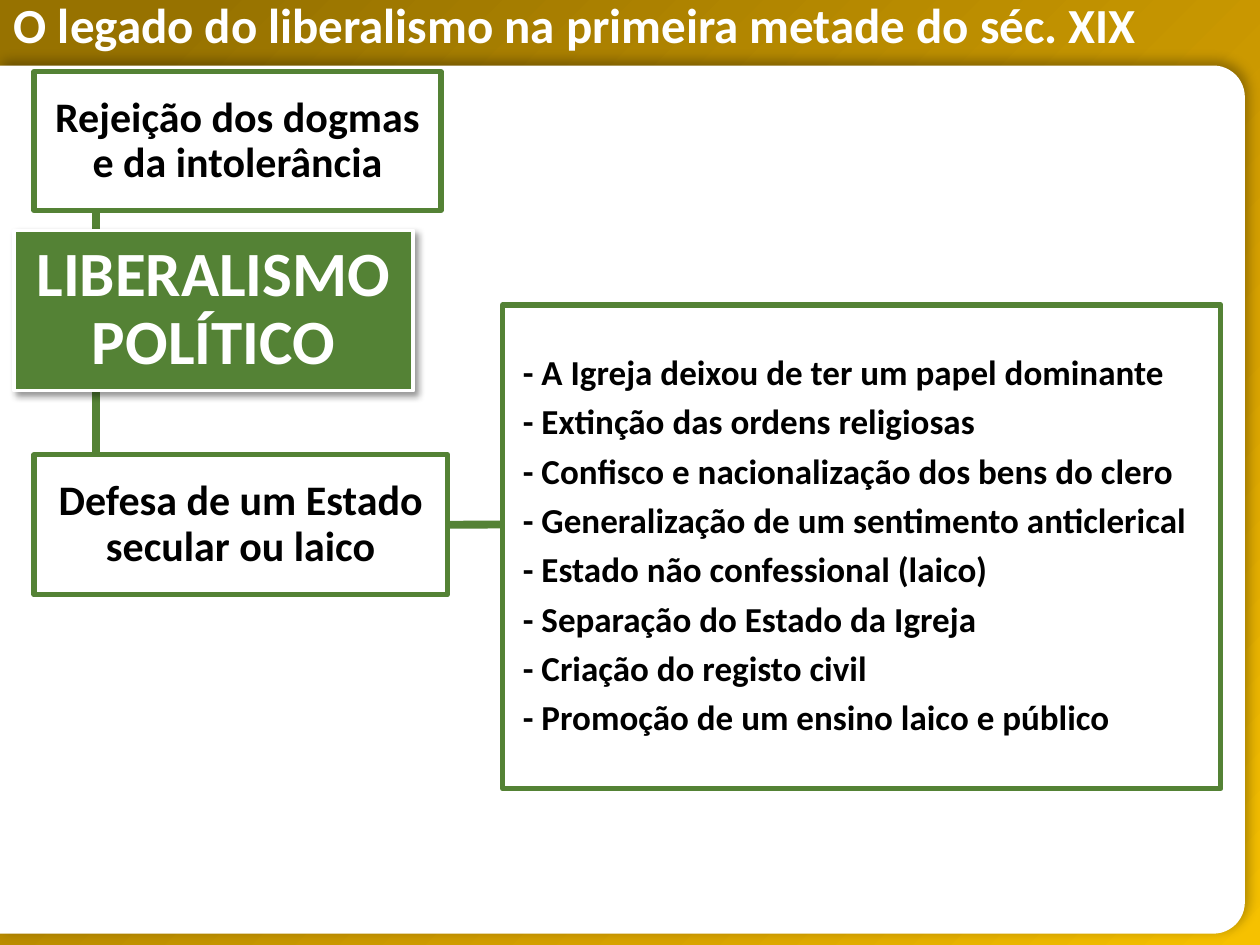
from copy import deepcopy
from math import cos, pi, sin

from lxml.etree import SubElement
from pptx import Presentation
from pptx.dml.color import RGBColor
from pptx.enum.shapes import MSO_CONNECTOR, MSO_SHAPE
from pptx.enum.text import MSO_ANCHOR, MSO_AUTO_SIZE, PP_ALIGN
from pptx.oxml.ns import qn
from pptx.util import Inches, Pt

GREEN, WHITE, BLACK = "548235", "FFFFFF", "000000"
GOLD_STOPS = [(9, "977200"), (72, "D7A200"), (100, "F6C100")]


def color(value):
    return RGBColor.from_string(value)


def write(shape, text, size, ink=BLACK, font="Calibri", align=PP_ALIGN.CENTER,
          anchor=MSO_ANCHOR.MIDDLE, insets=(0.01, 0.01, 0.01, 0.01), spacing=0.9, after=0):
    """Fill the shape with bold text; insets are left, top, right, bottom in inches."""
    frame = shape.text_frame
    frame.word_wrap = True
    frame.auto_size = MSO_AUTO_SIZE.NONE
    frame.vertical_anchor = anchor
    (frame.margin_left, frame.margin_top,
     frame.margin_right, frame.margin_bottom) = map(Inches, insets)
    frame.text = text
    for para in frame.paragraphs:
        para.alignment = align
        para.line_spacing = spacing
        para.space_before, para.space_after = Pt(0), Pt(after)
        for span in para.runs:
            span.font.name, span.font.size, span.font.bold = font, Pt(size), True
            span.font.color.rgb = color(ink)


def add_shadow(shape, alpha, blur, distance, angle):
    effects = shape.element.spPr.find(qn("a:effectLst"))
    shadow = SubElement(effects, qn("a:outerShdw"), blurRad=str(Pt(blur)),
                        dist=str(Pt(distance)), dir=str(angle * 60000),
                        algn="ctr", rotWithShape="0")
    tint = SubElement(shadow, qn("a:srgbClr"), val=BLACK)
    SubElement(tint, qn("a:alpha"), val=str(alpha * 1000))


class Diagram:
    def __init__(self, page, accent=GREEN):
        self.page = page
        self.accent = accent

    def style(self, shape, fill=None, line=None, line_width=3):
        shape.shadow.inherit = False
        if fill:
            shape.fill.solid()
            shape.fill.fore_color.rgb = color(fill)
        if line:
            shape.line.color.rgb = color(line)
            shape.line.width = Pt(line_width)
        else:
            shape.line.fill.background()
        return shape

    def rectangle(self, left, top, width, height, **look):
        box = self.page.shapes.add_shape(
            MSO_SHAPE.RECTANGLE, *map(Inches, (left, top, width, height)))
        return self.style(box, **look)

    def backdrop(self, width, height, stops):
        box = self.rectangle(0, 0, width, height)
        box.fill.gradient()
        box.fill.gradient_angle = 315
        stop_list = next(box.element.iter(qn("a:gsLst")))
        while len(stop_list) < len(stops):
            stop_list.append(deepcopy(stop_list[0]))
        for stop, (percent, value) in zip(box.fill.gradient_stops, stops):
            stop.position = percent / 100
            stop.color.rgb = color(value)

    def title(self, text):
        box = self.page.shapes.title
        box.element.getparent().append(box.element)  # in front of the backdrop
        box.left, box.top, box.width, box.height = map(Inches, (0.01, 0.15, 9.6, 0.37))
        write(box, text, 28, WHITE, align=PP_ALIGN.LEFT, anchor=MSO_ANCHOR.TOP,
              insets=(0.1, 0.05, 0.1, 0.05), spacing=Pt(16))

    def panel(self, top, right, bottom, radius, steps=12):
        """White sheet from the left edge, rounded at its right corners."""
        points = []
        for center_y, start in ((top + radius, -pi / 2), (bottom - radius, 0)):
            for step in range(steps + 1):
                angle = start + pi / 2 * step / steps
                points.append((Inches(right - radius + radius * cos(angle)),
                               Inches(center_y + radius * sin(angle))))
        points.append((0, Inches(bottom)))
        builder = self.page.shapes.build_freeform(0, Inches(top))
        builder.add_line_segments(points, close=True)
        add_shadow(self.style(builder.convert_to_shape(), WHITE), 30, 7, 3, 315)

    def connector(self, start, end):
        line = self.page.shapes.add_connector(
            MSO_CONNECTOR.STRAIGHT, *map(Inches, start + end))
        line.line.color.rgb = color(self.accent)
        line.line.width = Pt(4.5)
        SubElement(line.element.spPr, qn("a:effectLst"))
        return line

    def card(self, left, top, width, height, text, size=24, **text_format):
        box = self.rectangle(left, top, width, height, fill=WHITE, line=self.accent)
        write(box, text, size, **text_format)
        return box

    def heading(self, left, top, width, height, text):
        box = self.rectangle(left, top, width, height, fill=self.accent,
                             line=WHITE, line_width=2.25)
        add_shadow(box, 40, 4, 3, 45)
        write(box, text, 36, WHITE, insets=(0.08, 0.07, 0.08, 0.07))


def main():
    deck = Presentation()
    deck.slide_width, deck.slide_height = Inches(10), Inches(7.5)
    diagram = Diagram(deck.slides.add_slide(deck.slide_layouts[5]))

    diagram.backdrop(10, 7.5, GOLD_STOPS)
    diagram.title("O legado do liberalismo na primeira metade do séc. XIX")
    diagram.panel(top=0.52, right=9.88, bottom=7.41, radius=0.25)

    detail_link = diagram.connector((3.55, 4.16), (4.45, 4.16))
    diagram.connector((0.76, 1.46), (0.76, 4.49))
    diagram.card(0.27, 0.57, 3.23, 1.1, "Rejeição dos dogmas\ve da intolerância")
    secular_state = diagram.card(0.27, 3.61, 3.28, 1.11,
                                 "Defesa de um Estado secular ou laico")
    detail_link.begin_connect(secular_state, 3)

    measures = [
        "A Igreja deixou de ter um papel dominante",
        "Extinção das ordens religiosas",
        "Confisco e nacionalização dos bens do clero",
        "Generalização de um sentimento anticlerical",
        "Estado não confessional (laico)",
        "Separação do Estado da Igreja",
        "Criação do registo civil",
        "Promoção de um ensino laico e público",
    ]
    diagram.card(3.99, 2.42, 5.7, 3.84, "\n".join(f"- {measure}" for measure in measures),
                 size=20, align=PP_ALIGN.LEFT, insets=(0.16, 0.01, 0.01, 0.01), after=6.6)
    diagram.heading(0.11, 1.83, 3.17, 1.27, "LIBERALISMO POLÍTICO")
    deck.save("out.pptx")


if __name__ == "__main__":
    main()
